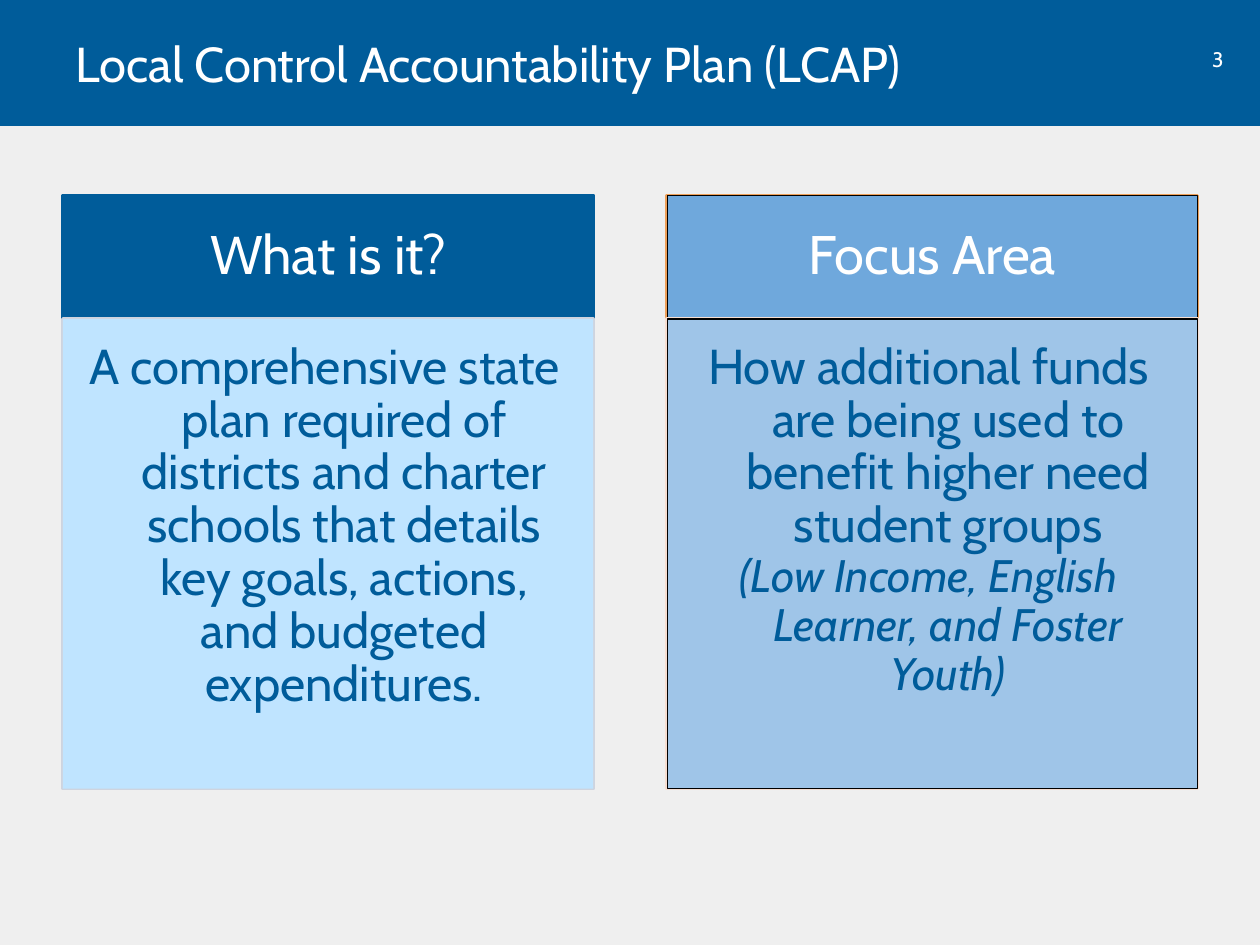
from pptx import Presentation
from pptx.dml.color import RGBColor
from pptx.enum.shapes import MSO_SHAPE
from pptx.enum.text import MSO_ANCHOR, PP_ALIGN
from pptx.util import Cm, Pt

FONT = "Cabin"
BLUE = RGBColor(0x00, 0x5C, 0x9A)
WHITE = RGBColor(0xFF, 0xFF, 0xFF)
BLACK = RGBColor(0x00, 0x00, 0x00)
BACKGROUND = RGBColor(0xEF, 0xEF, 0xEF)
ORANGE = RGBColor(0xEE, 0xA0, 0x5A)
MID_BLUE = RGBColor(0x6F, 0xA8, 0xDC)
SOFT_BLUE = RGBColor(0x9F, 0xC5, 0xE8)
PALE_BLUE = RGBColor(0xBF, 0xE4, 0xFF)
PALE_GREY = RGBColor(0xCE, 0xD4, 0xDF)
PEACH = RGBColor(0xF7, 0xDE, 0xD1)

TITLE = "Local Control Accountability Plan (LCAP)"
PAGE_NUMBER = "3"
COLUMNS = [
    {
        "heading": "What is it?",
        "body": [("A comprehensive state plan required of districts and charter schools "
                  "that details key goals, actions, and budgeted expenditures.",
                  {"size": Pt(28)})],
        "head_fill": BLUE, "head_frame": BLUE,
        "body_fill": PALE_BLUE, "body_frame": PALE_GREY, "outline": None,
    },
    {
        "heading": "Focus Area",
        "body": [("How additional funds are being used to benefit higher need student groups",
                  {"size": Pt(28)}),
                 ("(Low Income, English Learner, and Foster Youth)",
                  {"size": Pt(26), "italic": True})],
        "head_fill": MID_BLUE, "head_frame": ORANGE,
        "body_fill": SOFT_BLUE, "body_frame": PEACH, "outline": BLACK,
    },
]

# Lengths in cm
SLIDE_W, SLIDE_H, BAR_H = 25.4, 19.05, 2.54
LEFT, TOP, COLUMN_W, COLUMN_STEP = 1.27, 3.94, 10.69, 12.18
HEAD_H, BODY_H = 2.49, 9.47
HANGING = 0.79
TEXT_INSETS = (0.25, 0.13, 0.25, 0.13)
HEAD_INSETS = (0.61, 0.36, 0.61, 0.36)
BODY_INSETS = (0.46, 0.46, 0.61, 0.69)


def add_rect(s, box, fill, line=None, width=0.75):
    sp = s.shapes.add_shape(MSO_SHAPE.RECTANGLE, *map(Cm, box))
    sp.shadow.inherit = False
    sp.fill.solid()
    sp.fill.fore_color.rgb = fill
    if line is None:
        sp.line.fill.background()
    else:
        sp.line.color.rgb = line
        sp.line.width = Pt(width)
    return sp


def write(sp, paragraphs, color, insets, anchor=MSO_ANCHOR.TOP,
          align=PP_ALIGN.CENTER, spacing=None, hanging=0):
    """Fill a shape with (text, font format) paragraphs."""
    tf = sp.text_frame
    tf.word_wrap = True
    tf.vertical_anchor = anchor
    for side, inset in zip(("left", "top", "right", "bottom"), insets):
        setattr(tf, f"margin_{side}", Cm(inset))
    for i, (text, font_format) in enumerate(paragraphs):
        p = tf.add_paragraph() if i else tf.paragraphs[0]
        p.alignment = align
        p.line_spacing = spacing
        if hanging:
            pPr = p._p.get_or_add_pPr()
            pPr.set("marL", str(Cm(hanging)))
            pPr.set("indent", str(-Cm(hanging)))
        r = p.add_run()
        r.text = text
        r.font.color.rgb = color
        for name, value in {"name": FONT, **font_format}.items():
            setattr(r.font, name, value)


def add_text(s, box, text, size, **layout):
    sp = s.shapes.add_textbox(*map(Cm, box))
    write(sp, [(text, {"size": Pt(size)})], WHITE, TEXT_INSETS, **layout)


def add_column(s, left, column):
    head_box = (left, TOP, COLUMN_W, HEAD_H)
    body_box = (left, TOP + HEAD_H, COLUMN_W, BODY_H)
    for part, box in (("head", head_box), ("body", body_box)):
        frame = column[f"{part}_frame"]
        add_rect(s, box, frame, frame, 2)
        sp = add_rect(s, box, column[f"{part}_fill"], column["outline"])
        if part == "head":
            write(sp, [(column["heading"], {"size": Pt(31)})], WHITE, HEAD_INSETS,
                  anchor=MSO_ANCHOR.MIDDLE, spacing=0.9)
        else:
            write(sp, column["body"], BLUE, BODY_INSETS, spacing=0.9, hanging=HANGING)


def main():
    prs = Presentation()
    prs.slide_width, prs.slide_height = Cm(SLIDE_W), Cm(SLIDE_H)
    s = prs.slides.add_slide(prs.slide_layouts[6])
    s.background.fill.solid()
    s.background.fill.fore_color.rgb = BACKGROUND

    add_rect(s, (0, 0, SLIDE_W, BAR_H), BLUE)
    add_text(s, (23.98, 0.81, 1.14, 0.76), PAGE_NUMBER, 12)
    for i, column in enumerate(COLUMNS):
        add_column(s, LEFT + i * COLUMN_STEP, column)
    add_text(s, (LEFT, 0, 22.63, BAR_H), TITLE, 28,
             anchor=MSO_ANCHOR.MIDDLE, align=PP_ALIGN.LEFT)
    prs.save("out.pptx")


if __name__ == "__main__":
    main()
